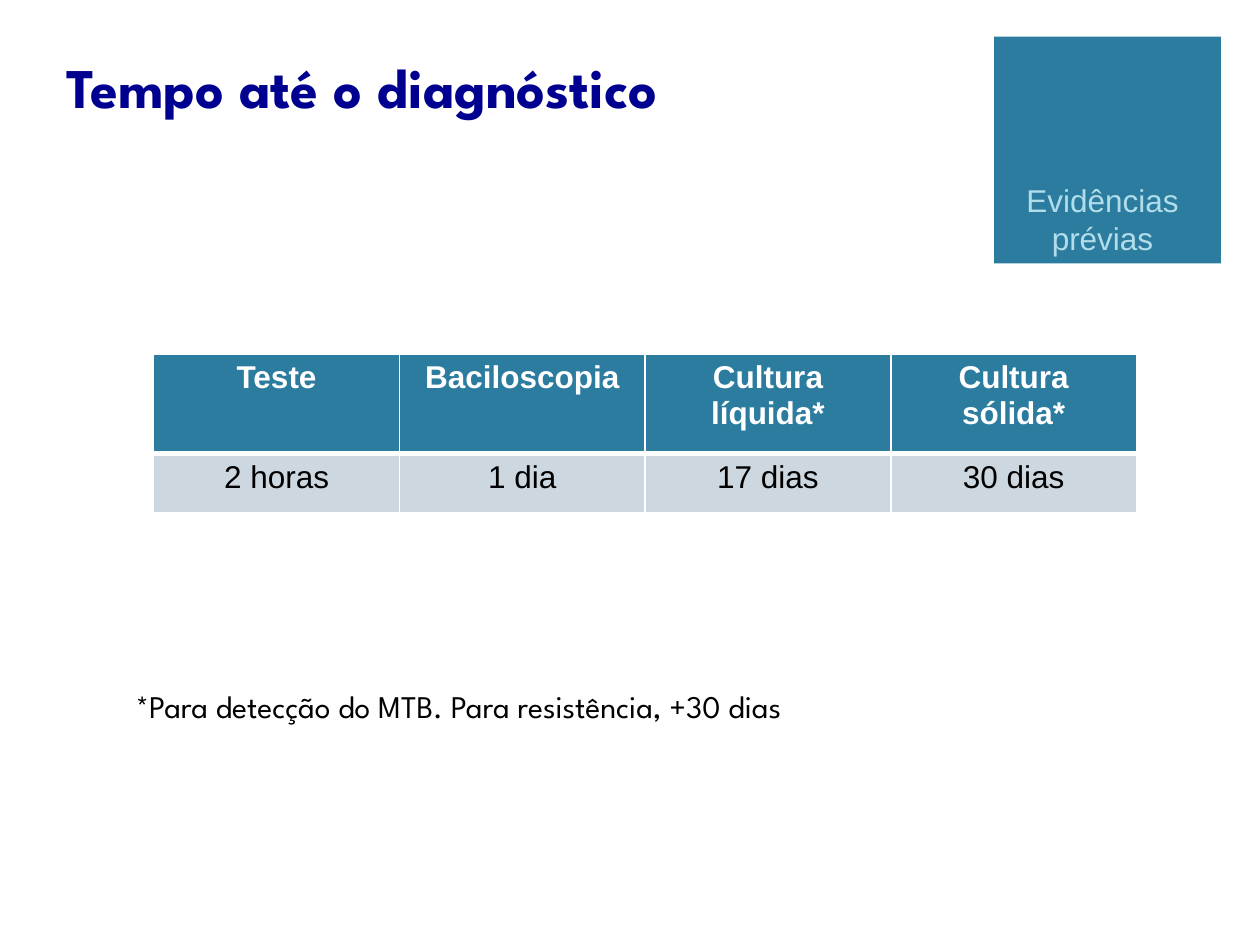
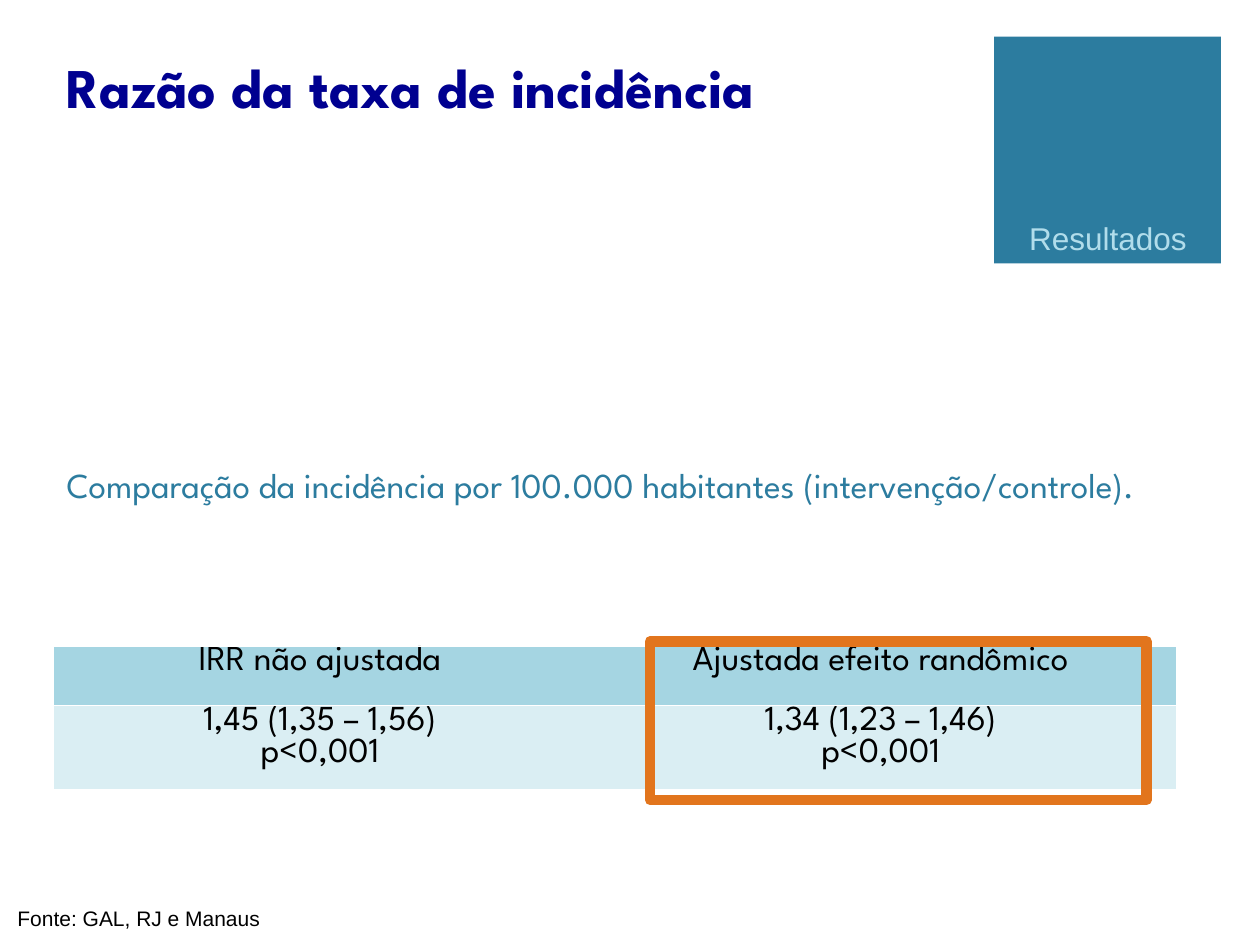
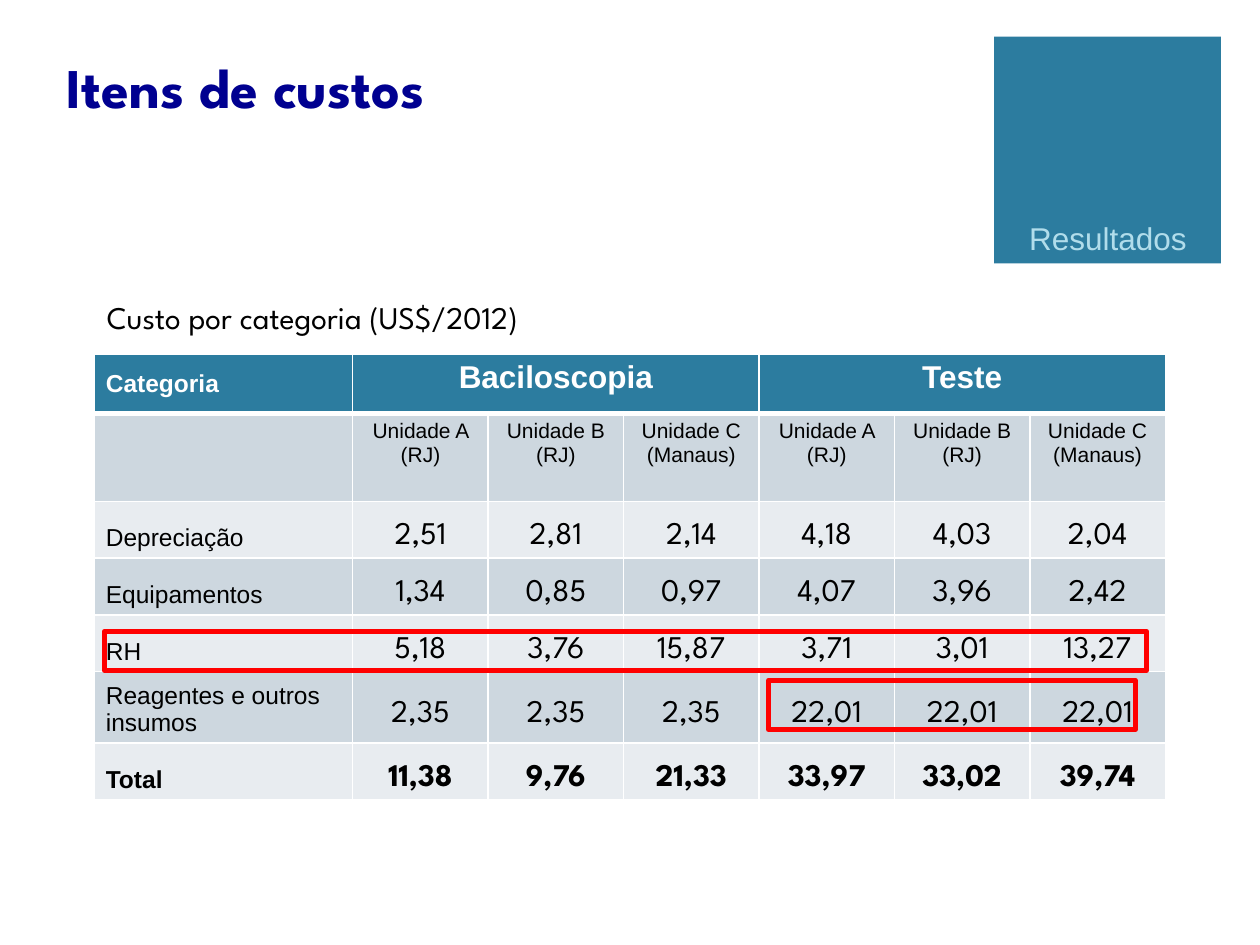
"""Build three slides on tuberculosis diagnosis: time, incidence and costs."""
from dataclasses import dataclass

from lxml.etree import SubElement
from pptx import Presentation
from pptx.dml.color import RGBColor
from pptx.enum.shapes import MSO_SHAPE as Shape
from pptx.enum.text import MSO_ANCHOR as Anchor, PP_ALIGN as Align
from pptx.oxml.ns import qn
from pptx.util import Inches, Pt


@dataclass(frozen=True)
class Theme:
    blue: str = "2C7C9F"
    pale_blue: str = "B1DDEB"
    navy: str = "000090"
    black: str = "000000"
    white: str = "FFFFFF"
    dark_band: str = "CDD7DF"
    light_band: str = "E8ECF0"
    aqua: str = "A5D5E2"
    pale_aqua: str = "DAEEF3"
    orange: str = "E2751D"
    red: str = "FF0000"
    sans: str = "Arial"
    display: str = "League Spartan"
    title: int = 32
    large: int = 20
    body: int = 18
    label: int = 14
    small: int = 12


theme = Theme()


def write(frame, text, size, font, color=theme.black, bold=False, align=Align.LEFT):
    frame.text = text
    for paragraph in frame.paragraphs:
        paragraph.alignment = align
        paragraph.font.size = Pt(size)
        paragraph.font.name = font
        paragraph.font.bold = bold
        paragraph.font.color.rgb = RGBColor.from_string(color)


def dress(cell, fill, left_right=1, top=1, bottom=1):
    properties = cell._tc.get_or_add_tcPr()
    for side, width in zip("LRTB", (left_right, left_right, top, bottom)):
        edge = SubElement(properties, qn(f"a:ln{side}"), w=str(Pt(width)))
        if width:
            paint = SubElement(edge, qn("a:solidFill"))
            SubElement(paint, qn("a:srgbClr"), val=theme.white)
        else:
            SubElement(edge, qn("a:noFill"))
    cell.fill.solid()
    cell.fill.fore_color.rgb = RGBColor.from_string(fill)


deck = Presentation()
deck.slide_width, deck.slide_height = Inches(10), Inches(7.5)

sections = [
    ("Tempo até o diagnóstico", "Evidências\nprévias", (8.04, 1.39, 1.42, 0.71), Align.CENTER),
    ("Razão da taxa de incidência", "Resultados", (8.07, 1.69, 1.46, 0.4), Align.LEFT),
    ("Itens de custos", "Resultados", (8.07, 1.69, 1.46, 0.4), Align.LEFT),
]
for title, section, section_box, section_align in sections:
    slide = deck.slides.add_slide(deck.slide_layouts[6])
    square = slide.shapes.add_shape(Shape.RECTANGLE, *map(Inches, (7.89, 0.29, 1.8, 1.8)))
    square.shadow.inherit = False
    square.fill.solid()
    square.fill.fore_color.rgb = RGBColor.from_string(theme.blue)
    square.line.fill.background()
    heading = slide.shapes.add_textbox(*map(Inches, (0.43, 0.37, 6.85, 0.64))).text_frame
    heading.word_wrap = True
    write(heading, title, theme.title, theme.display, theme.navy, True)
    tag = slide.shapes.add_textbox(*map(Inches, section_box)).text_frame
    tag.word_wrap = False
    write(tag, section, theme.body, theme.sans, theme.pale_blue, align=section_align)

diagnosis, incidence, costs = deck.slides

notes = [
    (diagnosis, (0.98, 5.4, 7.95, 0.4), "*Para detecção do MTB. Para resistência, +30 dias",
     theme.body, theme.display, theme.black, Anchor.TOP),
    (incidence, (0.43, 2.96, 8.9, 1.1),
     "Comparação da incidência por 100.000 habitantes (intervenção/controle).",
     theme.large, theme.display, theme.blue, Anchor.BOTTOM),
    (incidence, (0.04, 7.14, 2.15, 0.3), "Fonte: GAL, RJ e Manaus",
     theme.small, theme.sans, theme.black, Anchor.TOP),
    (costs, (0.75, 2.32, 4.33, 0.4), "Custo por categoria (US$/2012)",
     theme.body, theme.display, theme.black, Anchor.TOP),
]
for slide, box, text, size, font, color, anchor in notes:
    note = slide.shapes.add_textbox(*map(Inches, box)).text_frame
    note.word_wrap = True
    note.vertical_anchor = anchor
    write(note, text, size, font, color)

times = [
    ["Teste", "Baciloscopia", "Cultura líquida*", "Cultura sólida*"],
    ["2 horas", "1 dia", "17 dias", "30 dias"],
]
ratios = [
    ["IRR não ajustada", "Ajustada efeito randômico"],
    ["1,45 (1,35 – 1,56)\np<0,001", "1,34 (1,23 – 1,46)\np<0,001"],
]
units = ["Unidade A (RJ)", "Unidade B (RJ)", "Unidade C (Manaus)"]
expenses = [
    ["Categoria", "Baciloscopia", "", "", "Teste", "", ""],
    ["", *units, *units],
    ["Depreciação", "2,51", "2,81", "2,14", "4,18", "4,03", "2,04"],
    ["Equipamentos", "1,34", "0,85", "0,97", "4,07", "3,96", "2,42"],
    ["RH", "5,18", "3,76", "15,87", "3,71", "3,01", "13,27"],
    ["Reagentes e outros insumos", "2,35", "2,35", "2,35", "22,01", "22,01", "22,01"],
    ["Total", "11,38", "9,76", "21,33", "33,97", "33,02", "39,74"],
]
unit_width = (8.5 - 2.05) / 6
grids = []
for slide, content, left, top, widths, heights in [
    (diagnosis, times, 1.22, 2.81, [1.95] * 4, [0.79, 0.47]),
    (incidence, ratios, 0.43, 5.13, [4.22, 4.68], [0.47, 0.67]),
    (costs, expenses, 0.75, 2.81, [2.05] + [unit_width] * 6,
     [0.47, 0.7, 0.45, 0.45, 0.45, 0.56, 0.45]),
]:
    grid = slide.shapes.add_table(
        len(heights), len(widths), Inches(left), Inches(top),
        Inches(sum(widths)), Inches(sum(heights))).table
    grid.first_row = grid.horz_banding = False
    for column, width in zip(grid.columns, widths):
        column.width = Inches(width)
    for row, height in zip(grid.rows, heights):
        row.height = Inches(height)
    grids.append(grid)
time_grid, ratio_grid, cost_grid = grids

for r, row in enumerate(times):
    for c, text in enumerate(row):
        cell = time_grid.cell(r, c)
        header = r == 0
        write(cell.text_frame, text, theme.body, theme.sans,
              theme.white if header else theme.black, header, Align.CENTER)
        dress(cell, theme.blue if header else theme.dark_band,
              top=1 if header else 3, bottom=3 if header else 1)

for r, row in enumerate(ratios):
    for c, text in enumerate(row):
        cell = ratio_grid.cell(r, c)
        cell.margin_left = cell.margin_right = Inches(0.07)
        cell.margin_top = cell.margin_bottom = 0
        write(cell.text_frame, text, theme.large, theme.display, align=Align.CENTER)
        dress(cell, (theme.aqua, theme.pale_aqua)[r], left_right=0)

for first in (1, 4):
    cost_grid.cell(0, first).merge(cost_grid.cell(0, first + 2))
for r, row in enumerate(expenses):
    for c, text in enumerate(row):
        cell = cost_grid.cell(r, c)
        header, category, value = r == 0, c == 0, r > 1 and c > 0
        cell.margin_left = cell.margin_right = Inches(0.05 if value else 0.09)
        cell.margin_top = cell.margin_bottom = Inches(0 if value else 0.05)
        size = theme.label if category else theme.small if r == 1 else theme.body
        write(cell.text_frame, text, size, theme.display if value else theme.sans,
              theme.white if header else theme.black, header or row[0] == "Total",
              Align.LEFT if category else Align.CENTER)
        if value:
            cell.text_frame.paragraphs[0].line_spacing = 1.5
            cell.text_frame.paragraphs[0].space_before = Pt(6)
        if value or header and category:
            cell.vertical_anchor = Anchor.MIDDLE
        elif category:
            cell.vertical_anchor = Anchor.BOTTOM
        band = theme.dark_band if r % 2 else theme.light_band
        dress(cell, theme.blue if header else band,
              top=3 if r == 1 else 1, bottom=3 if header else 1)

highlights = [
    (incidence, (5.16, 5.09, 3.94, 1.26), theme.orange, 6),
    (costs, (0.83, 5.01, 8.27, 0.31), theme.red, 3),
    (costs, (6.1, 5.4, 2.91, 0.39), theme.red, 3),
]
for slide, box, color, width in highlights:
    highlight = slide.shapes.add_shape(Shape.RECTANGLE, *map(Inches, box))
    highlight.shadow.inherit = False
    highlight.fill.background()
    highlight.line.color.rgb = RGBColor.from_string(color)
    highlight.line.width = Pt(width)

deck.save("out.pptx")
